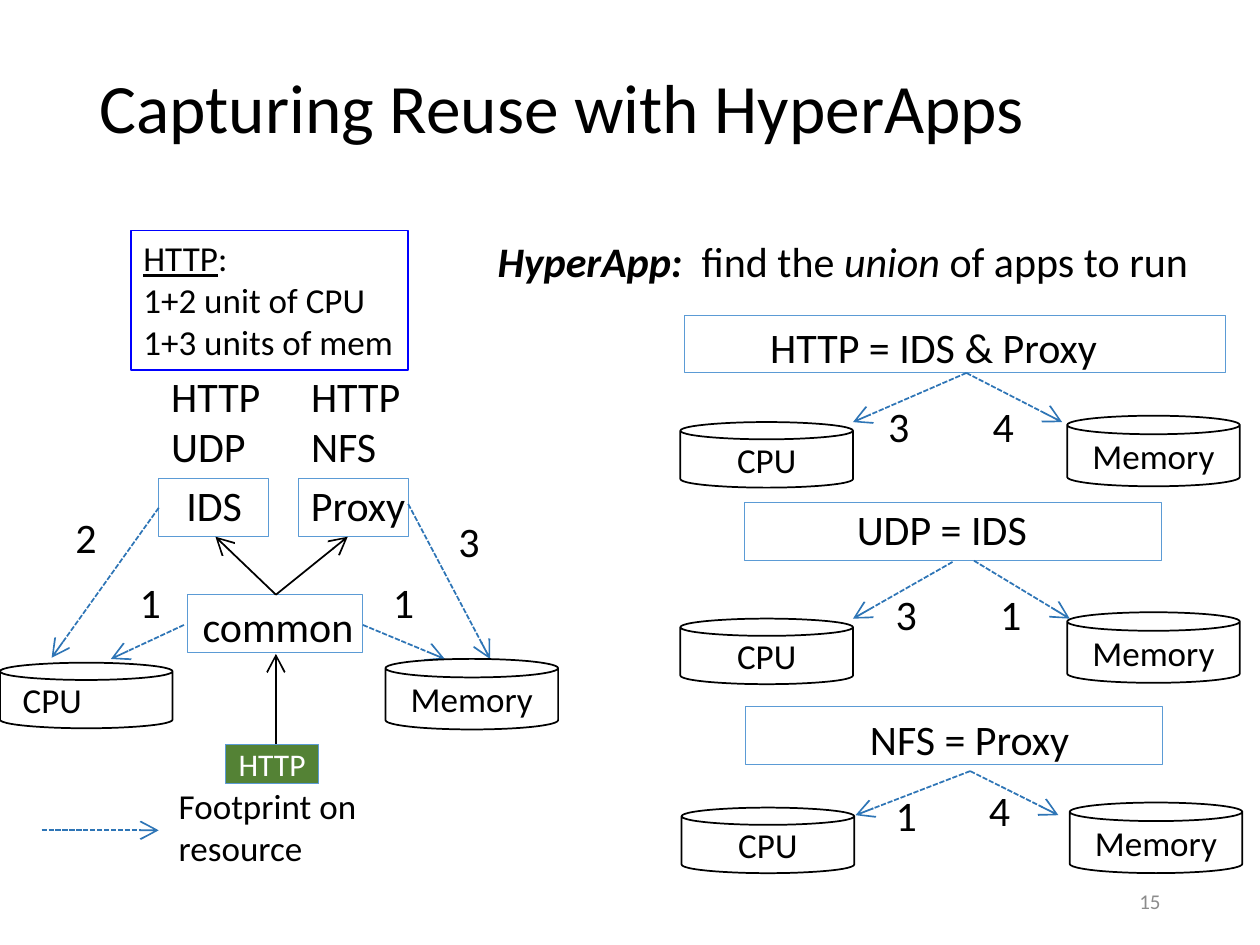
from dataclasses import dataclass

from lxml import etree
from pptx import Presentation
from pptx.dml.color import RGBColor
from pptx.enum.dml import MSO_LINE
from pptx.enum.shapes import MSO_CONNECTOR, MSO_SHAPE
from pptx.enum.text import MSO_ANCHOR, MSO_AUTO_SIZE, PP_ALIGN
from pptx.oxml.ns import qn
from pptx.util import Inches, Pt

RECT, CAN = MSO_SHAPE.RECTANGLE, MSO_SHAPE.CAN
STRAIGHT, DASH = MSO_CONNECTOR.STRAIGHT, MSO_LINE.SQUARE_DOT
LEFT, CENTER, RIGHT = PP_ALIGN.LEFT, PP_ALIGN.CENTER, PP_ALIGN.RIGHT
TOP, MIDDLE = MSO_ANCHOR.TOP, MSO_ANCHOR.MIDDLE
GROW, FIXED = MSO_AUTO_SIZE.SHAPE_TO_FIT_TEXT, MSO_AUTO_SIZE.NONE

COLORS = {
    "black": "000000",
    "white": "FFFFFF",
    "gray": "8C8C8C",
    "frame": "5B9BD5",
    "use": "2E75B6",
    "note": "0000FF",
    "packet": "548235",
}


def tint(name):
    return RGBColor.from_string(COLORS[name])


def put(target, values):
    for key, value in values.items():
        setattr(target, key, value)


@dataclass
class Board:
    slide: object
    font: str = "Calibri"

    def set_text(self, shape, text, size=24, color="black", align=LEFT, **frame):
        """Fill a shape; text is a string, or a list of lines of (words, format) runs."""
        box = shape.text_frame
        put(box, {"word_wrap": True, "auto_size": FIXED, "vertical_anchor": TOP, **frame})
        lines = text
        if isinstance(text, str):
            lines = [[(line, {})] for line in text.split("\n")]
        for i, runs in enumerate(lines):
            par = box.add_paragraph() if i else box.paragraphs[0]
            par.alignment = align
            for words, style in runs:
                run = par.add_run()
                run.text = words
                put(run.font, {"name": self.font, "size": Pt(size), **style})
                run.font.color.rgb = tint(color)

    def title(self, text, at):
        shape = self.slide.shapes.title
        put(shape, dict(zip(("left", "top", "width", "height"), map(Inches, at))))
        self.set_text(shape, text, 39.6, vertical_anchor=MIDDLE)
        shape.text_frame.paragraphs[0].line_spacing = 0.9

    def label(self, text, x, y, w=0.37, h=0.5, **style):
        box = self.slide.shapes.add_textbox(*map(Inches, (x, y, w, h)))
        self.set_text(box, text, **{"word_wrap": False, "auto_size": GROW, **style})

    def shape(self, kind, x, y, w, h, fill=None, line="frame", width=0.5):
        item = self.slide.shapes.add_shape(kind, *map(Inches, (x, y, w, h)))
        item.shadow.inherit = False
        if fill:
            item.fill.solid()
            item.fill.fore_color.rgb = tint(fill)
        else:
            item.fill.background()
        item.line.color.rgb = tint(line)
        item.line.width = Pt(width)
        return item

    def store(self, text, x, y, h, align=CENTER, **frame):
        """Draw a resource as a cylinder."""
        can = self.shape(CAN, x, y, 1.37, h, "white", "black", 1)
        can.adjustments[0] = 0.263
        self.set_text(can, text, 20, align=align, vertical_anchor=MIDDLE, **frame)

    def arrow(self, start, end, use=True):
        """Join two points; a dashed blue arrow shows resource use."""
        line = self.slide.shapes.add_connector(STRAIGHT, *map(Inches, (*start, *end)))
        line.line.color.rgb = tint("use" if use else "black")
        line.line.width = Pt(1)
        if use:
            line.line.dash_style = DASH
        edge = line._element.spPr.find(qn("a:ln"))
        etree.SubElement(edge, qn("a:tailEnd"), type="arrow", w="lg", len="lg")
        etree.SubElement(line._element.spPr, qn("a:effectLst"))


def draw_graph(board):
    """Draw the shared modules and the resources they use."""
    modules = [
        ("IDS", 1.26, 3.8, 0.87, (1.38, 3.76, 0.65)),
        ("Proxy", 2.37, 3.8, 0.87, (2.37, 3.76, 0.96)),
        ("common", 1.49, 4.72, 1.39, (1.51, 4.72, 1.62)),
    ]
    for name, x, y, w, spot in modules:
        board.shape(RECT, x, y, w, 0.46)
        board.label(name, *spot)

    hub = (2.19, 4.72)
    for start, end in [((2.19, 5.93), (2.19, 5.19)), (hub, (1.71, 4.26)), (hub, (2.76, 4.26))]:
        board.arrow(start, end, use=False)
    uses = [
        ((1.26, 4.03), (0.41, 5.22)),
        ((3.24, 4), (3.89, 5.23)),
        ((2.88, 4.96), (3.53, 5.23)),
        ((1.46, 4.96), (0.88, 5.23)),
        ((0.33, 6.59), (1.26, 6.59)),
    ]
    for start, end in uses:
        board.arrow(start, end)

    board.label("Footprint on\nresource", 1.32, 6.18, 1.63, 0.77, size=20)
    for text, x in [("HTTP\nUDP", 1.26), ("HTTP\nNFS", 2.37)]:
        board.label(text, x, 2.89, 0.91, 0.91)
    for cost, x, y in [("2", 0.5, 4.01), ("3", 3.54, 4.04), ("1", 3.02, 4.53), ("1", 1.01, 4.53)]:
        board.label(cost, x, y)
    board.store("Memory", 3.06, 5.23, 0.56)
    board.store("CPU", 0, 5.26, 0.52, LEFT, margin_left=Inches(0.18))

    packet = board.shape(RECT, 1.79, 5.91, 0.74, 0.31, "packet")
    board.set_text(packet, "HTTP", 18, "white", CENTER, vertical_anchor=MIDDLE, word_wrap=False)
    note = board.shape(RECT, 1.04, 1.83, 2.2, 1.11, "white", "note", 1)
    lines = [
        [("HTTP", {"underline": True}), (":", {})],
        [("1+2 unit of CPU", {})],
        [("1+3 units of mem", {})],
    ]
    board.set_text(note, lines, 20, word_wrap=False, auto_size=GROW)


def draw_app(board, name, frame, text, cpu, mem, costs, tips):
    """Draw one app with its use of CPU and memory."""
    board.shape(RECT, *frame, 0.46)
    board.label(name, *text, align=CENTER, word_wrap=True)
    board.store("CPU", *cpu, 0.52)
    board.store("Memory", *mem, 0.56)
    for cost in costs:
        board.label(*cost)
    for start, end in tips:
        board.arrow(start, end)


APPS = [
    ("HTTP = IDS & Proxy", (5.43, 2.5, 4.3), (5.26, 2.5, 4.3), (5.4, 3.35), (8.47, 3.3),
     [("3", 6.95, 3.13), ("4", 7.78, 3.13)],
     [((7.67, 2.96), (6.77, 3.35)), ((7.67, 2.96), (8.43, 3.35))]),
    ("UDP = IDS", (5.91, 3.99, 3.31), (5.73, 3.95, 3.49), (5.4, 4.91), (8.47, 4.86),
     [("3", 7.01, 4.62), ("1", 7.84, 4.62)],
     [((7.56, 4.46), (6.77, 4.91)), ((7.73, 4.45), (8.49, 4.91))]),
    ("NFS = Proxy", (5.92, 5.61, 3.31), (5.95, 5.61, 3.49), (5.41, 6.41), (8.49, 6.37),
     [("1", 7.01, 6.22), ("4", 7.75, 6.18)],
     [((7.7, 6.12), (6.79, 6.47)), ((7.7, 6.12), (8.4, 6.47))]),
]


def main():
    deck = Presentation()
    put(deck, {"slide_width": Inches(10), "slide_height": Inches(7.5)})
    board = Board(deck.slides.add_slide(deck.slide_layouts[5]))
    board.title("Capturing Reuse with HyperApps", (0.69, 0.4, 8.62, 0.96))
    draw_graph(board)
    for app in APPS:
        draw_app(board, *app)
    claim = [[
        ("HyperApp:  ", {"bold": True, "italic": True}),
        ("find the ", {}),
        ("union ", {"italic": True}),
        ("of apps to run", {}),
    ]]
    board.label(claim, 3.85, 1.82, 5.71, word_wrap=True)
    board.label("15", 7.06, 6.95, 2.25, 0.4, size=12, color="gray", align=RIGHT,
                word_wrap=True, auto_size=FIXED, vertical_anchor=MIDDLE)
    deck.save("out.pptx")


if __name__ == "__main__":
    main()
